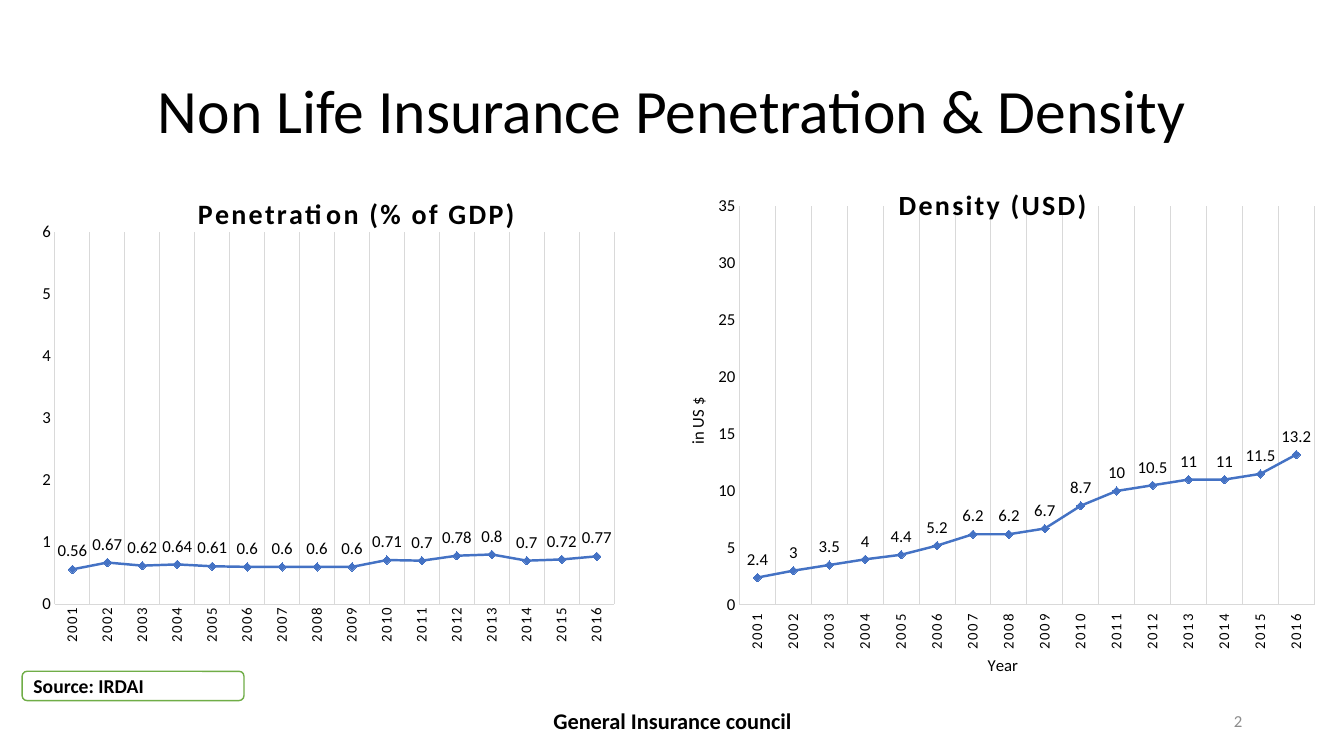
import pptx
import pptx.chart.data
import pptx.dml.color
import pptx.enum.chart
import pptx.enum.shapes
import pptx.enum.text
import pptx.oxml
import pptx.oxml.ns
import pptx.util

Inches = pptx.util.Inches
Pt = pptx.util.Pt
RGBColor = pptx.dml.color.RGBColor
PP_ALIGN = pptx.enum.text.PP_ALIGN

BLACK = RGBColor(0x00, 0x00, 0x00)
WHITE = RGBColor(0xFF, 0xFF, 0xFF)
GREY = RGBColor(0x8C, 0x8C, 0x8C)
RULE = RGBColor(0xD9, 0xD9, 0xD9)
BLUE = RGBColor(0x44, 0x72, 0xC4)
GREEN = RGBColor(0x70, 0xAD, 0x47)

YEARS = [str(year) for year in range(2001, 2017)]

PENETRATION = {
    "title": "Penetration (% of GDP)", "title_at": (0.25, 0.05),
    "plot": (0.038, 0.137, 0.86, 0.75), "maximum": 6, "step": 1,
    "values": [0.56, 0.67, 0.62, 0.64, 0.61, 0.6, 0.6, 0.6,
               0.6, 0.71, 0.7, 0.78, 0.8, 0.7, 0.72, 0.77],
}
DENSITY = {
    "title": "Density (USD)", "title_at": (0.34, 0.03),
    "plot": (0.103, 0.082, 0.884, 0.779), "maximum": 35, "step": 5,
    "values": [2.4, 3, 3.5, 4, 4.4, 5.2, 6.2, 6.2,
               6.7, 8.7, 10, 10.5, 11, 11, 11.5, 13.2],
    "year_title": ("Year", (0.48, 0.95)),
    "value_title": ("in US $", (0.016, 0.45)),
}


def apply(target, formats):
    for attribute, value in formats.items():
        setattr(target, attribute, value)


def format_font(font, size, color=BLACK, bold=False):
    apply(font, {"name": "Calibri", "size": Pt(size), "bold": bold})
    font.color.rgb = color


def format_line(line, color, width):
    line.color.rgb = color
    line.width = Pt(width)


def write(frame, text, size, align, color=BLACK, bold=False):
    apply(frame, {"word_wrap": True, "text": text,
                  "vertical_anchor": pptx.enum.text.MSO_ANCHOR.MIDDLE})
    paragraph = frame.paragraphs[0]
    paragraph.alignment = align
    format_font(paragraph.runs[0].font, size, color, bold)
    return paragraph


def set_layout(element, position, index, inner=False):
    for old in element.findall(pptx.oxml.ns.qn("c:layout")):
        element.remove(old)
    target = '<c:layoutTarget val="inner"/>' if inner else ""
    modes = "".join(f'<c:{axis}Mode val="edge"/>' for axis in "xy")
    sizes = "".join(f'<c:{key} val="{value}"/>'
                    for key, value in zip("xywh", position))
    element.insert(index, pptx.oxml.parse_xml(
        f'<c:layout {pptx.oxml.ns.nsdecls("c")}><c:manualLayout>'
        f"{target}{modes}{sizes}</c:manualLayout></c:layout>"))


def write_chart_title(title, text, position, size, bold=False):
    title.text_frame.text = text
    run = title.text_frame.paragraphs[0].runs[0]
    format_font(run.font, size, bold=bold)
    set_layout(title._element, position, 1)
    return run


def add_title(slide, box):
    title = slide.shapes.title
    apply(title, dict(zip(("left", "top", "width", "height"), map(Inches, box))))
    heading = write(title.text_frame, "Non Life Insurance Penetration & Density",
                    44, PP_ALIGN.CENTER)
    heading.line_spacing = 0.9


def add_trend(slide, box, trend):
    data = pptx.chart.data.CategoryChartData()
    data.categories = YEARS
    data.add_series("Series 1", trend["values"])
    chart = slide.shapes.add_chart(
        pptx.enum.chart.XL_CHART_TYPE.LINE_MARKERS, *map(Inches, box), data).chart
    chart.has_legend = False
    format_font(chart.font, 10)
    heading = write_chart_title(chart.chart_title, trend["title"],
                                trend["title_at"], 20, True)
    heading._r.get_or_add_rPr().set("spc", "150")
    set_layout(chart._chartSpace.chart.plotArea, trend["plot"], 0, True)

    years, scale = chart.category_axis, chart.value_axis
    for axis, size in ((years, 10.6), (scale, 12)):
        apply(axis, {"major_tick_mark": pptx.enum.chart.XL_TICK_MARK.NONE,
                     "minor_tick_mark": pptx.enum.chart.XL_TICK_MARK.NONE,
                     "has_major_gridlines": axis is years})
        format_font(axis.tick_labels.font, size)
        format_line(axis.format.line, RULE, 0.75)
    format_line(years.major_gridlines.format.line, RULE, 0.75)
    year_text = years._element.txPr
    year_text.bodyPr.set("rot", "-5400000")
    year_text.xpath(".//a:defRPr")[0].set("spc", "120")
    apply(scale, {"minimum_scale": 0, "maximum_scale": trend["maximum"],
                  "major_unit": trend["step"]})
    if "year_title" in trend:
        years.tick_label_position = pptx.enum.chart.XL_TICK_LABEL_POSITION.LOW
        write_chart_title(years.axis_title, *trend["year_title"], 12)
        write_chart_title(scale.axis_title, *trend["value_title"], 12)
        scale.axis_title.text_frame._txBody.bodyPr.set("rot", "-5400000")

    plot = chart.plots[0]
    plot.vary_by_categories = False
    series = plot.series[0]
    series.smooth = False
    format_line(series.format.line, BLUE, 1.75)
    apply(series.marker, {"style": pptx.enum.chart.XL_MARKER_STYLE.DIAMOND, "size": 6})
    series.marker.format.fill.solid()
    series.marker.format.fill.fore_color.rgb = BLUE
    format_line(series.marker.format.line, BLUE, 0.75)
    labels = series.data_labels
    apply(labels, {"show_value": True,
                   "position": pptx.enum.chart.XL_LABEL_POSITION.ABOVE})
    format_font(labels.font, 12)


def add_source(slide, box):
    source = slide.shapes.add_shape(
        pptx.enum.shapes.MSO_SHAPE.ROUNDED_RECTANGLE, *map(Inches, box))
    source.shadow.inherit = False
    source.fill.solid()
    source.fill.fore_color.rgb = WHITE
    format_line(source.line, GREEN, 1)
    write(source.text_frame, "Source: IRDAI", 14, PP_ALIGN.LEFT, bold=True)


def add_footer(slide, box):
    left, top, width, height = box
    council = slide.shapes.add_textbox(*map(Inches, (left, top, 4.5, height)))
    write(council.text_frame, "General Insurance council", 16,
          PP_ALIGN.CENTER, bold=True)
    number = slide.shapes.add_textbox(
        *map(Inches, (left + width - 3, top, 3, height)))
    write(number.text_frame, "2", 12, PP_ALIGN.RIGHT, GREY)


def main():
    deck = pptx.Presentation()
    apply(deck, {"slide_width": Inches(13.33), "slide_height": Inches(7.5)})
    slide = deck.slides.add_slide(deck.slide_layouts[5])
    add_title(slide, (0.92, 0.4, 11.5, 1.45))
    add_trend(slide, (0.3, 1.63, 6.45, 4.92), PENETRATION)
    add_source(slide, (0.22, 6.66, 2.2, 0.29))
    add_footer(slide, (4.42, 6.95, 8, 0.4))
    add_trend(slide, (6.67, 1.63, 6.45, 5.12), DENSITY)
    deck.save("out.pptx")


if __name__ == "__main__":
    main()
